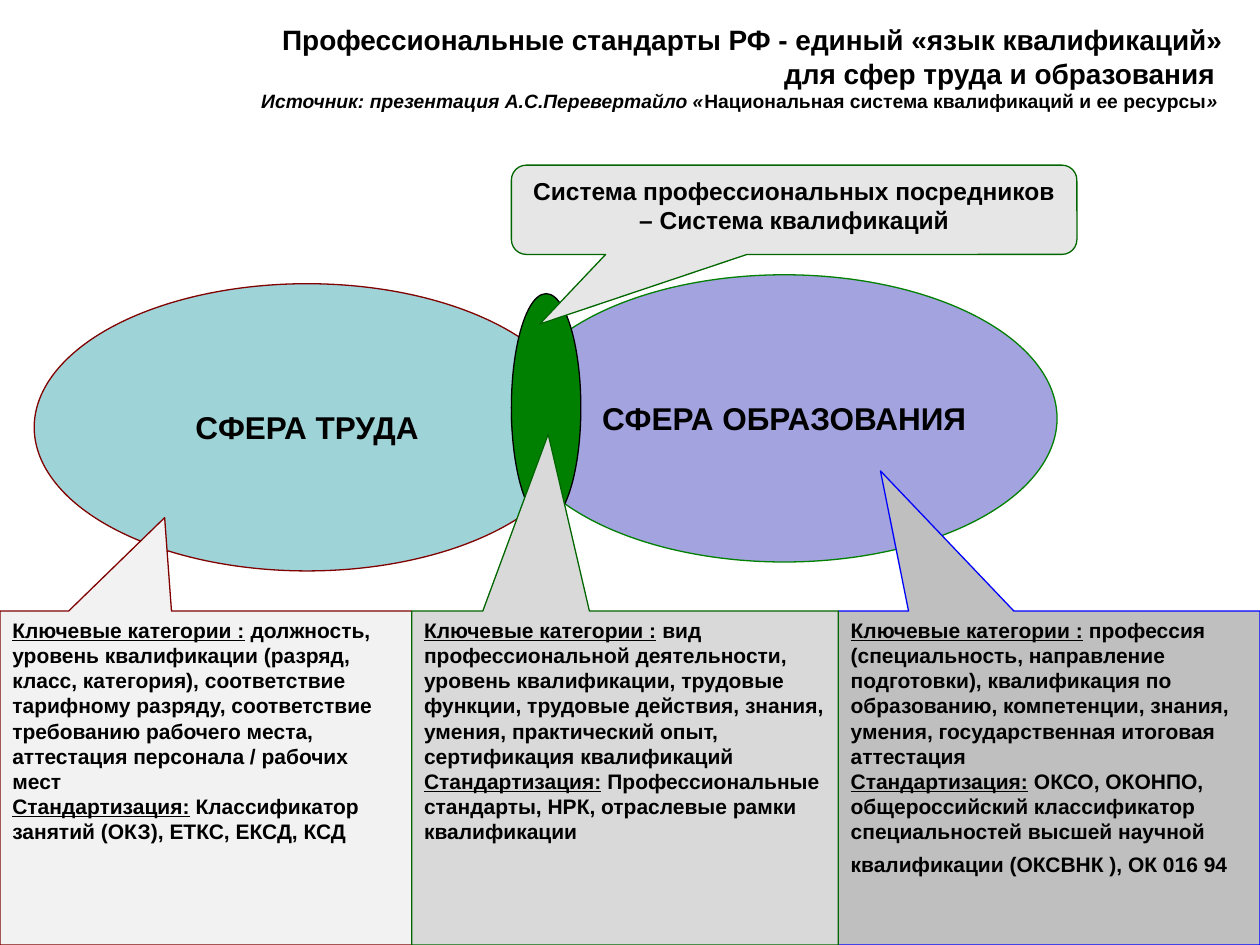
from dataclasses import dataclass

from pptx import Presentation
from pptx.dml.color import RGBColor
from pptx.enum.shapes import MSO_SHAPE
from pptx.enum.text import MSO_ANCHOR, PP_ALIGN
from pptx.util import Cm, Pt

COLORS = {
    "text": "000000",
    "labour": "9ED3D7",
    "education": "A3A3E0",
    "overlap": "008000",
    "maroon": "800000",
    "green": "006600",
    "blue": "0000FF",
    "grey_lightest": "F2F2F2",
    "grey_light": "E6E6E6",
    "grey_medium": "D9D9D9",
    "grey_dark": "BFBFBF",
}

SLIDE_WIDTH, SLIDE_HEIGHT = 25.4, 19.05
SPHERE_WIDTH, SPHERE_HEIGHT = 11, 5.79
OVERLAP_LEFT = 10.31
CALLOUT_TOP = 12.32


@dataclass
class Ellipse:
    label: str
    left: float
    top: float
    width: float
    height: float
    fill: str
    line: str


@dataclass
class Callout:
    categories: str
    standards: str
    left: float
    right: float
    tail: tuple[float, float]
    fill: str
    line: str
    closing_size: float = 12


ELLIPSES = [
    Ellipse("СФЕРА ТРУДА", 0.69, 5.72, SPHERE_WIDTH, SPHERE_HEIGHT, "labour", "maroon"),
    Ellipse("СФЕРА ОБРАЗОВАНИЯ", OVERLAP_LEFT, 5.54, SPHERE_WIDTH, SPHERE_HEIGHT, "education", "overlap"),
    Ellipse("", OVERLAP_LEFT, 5.92, 1.4, 4.6, "overlap", "text"),
]

CALLOUTS = [
    Callout(
        "должность, уровень квалификации (разряд, класс, категория), соответствие "
        "тарифному разряду, соответствие требованию рабочего места, "
        "аттестация персонала / рабочих мест",
        "Классификатор занятий (ОКЗ), ЕТКС, ЕКСД, КСД",
        0, 8.3, (-0.1, -0.78), "grey_lightest", "maroon",
    ),
    Callout(
        "профессия (специальность, направление подготовки), квалификация по "
        "образованию, компетенции, знания, умения, государственная итоговая аттестация",
        "ОКСО, ОКОНПО, общероссийский классификатор специальностей высшей научной "
        "квалификации (ОКСВНК ), ОК 016 94",
        16.9, SLIDE_WIDTH, (-0.4, -0.92), "grey_dark", "blue", closing_size=16,
    ),
    Callout(
        "вид профессиональной деятельности, уровень квалификации, трудовые функции, "
        "трудовые действия, знания, умения, практический опыт, сертификация квалификаций",
        "Профессиональные стандарты, НРК, отраслевые рамки квалификации",
        8.3, 16.9, (-0.18, -1.03), "grey_medium", "green",
    ),
]


def add_span(para, text: str, *, size: float, italic: bool = False, underline: bool = False) -> None:
    span = para.add_run()
    span.text = text
    font = span.font
    font.name = "Arial"
    font.size = Pt(size)
    font.bold = True
    font.italic = italic
    font.underline = underline
    font.color.rgb = RGBColor.from_string(COLORS["text"])


def add_outlined_shape(page, kind, left: float, top: float, width: float, height: float, fill: str, line: str):
    shape = page.shapes.add_shape(kind, Cm(left), Cm(top), Cm(width), Cm(height))
    shape.shadow.inherit = False
    shape.fill.solid()
    shape.fill.fore_color.rgb = RGBColor.from_string(COLORS[fill])
    shape.line.color.rgb = RGBColor.from_string(COLORS[line])
    shape.line.width = Pt(0.75)
    shape.text_frame.word_wrap = True
    shape.text_frame.vertical_anchor = MSO_ANCHOR.TOP
    return shape


def draw_ellipse(page, ellipse: Ellipse) -> None:
    shape = add_outlined_shape(
        page, MSO_SHAPE.OVAL, ellipse.left, ellipse.top,
        ellipse.width, ellipse.height, ellipse.fill, ellipse.line,
    )
    if ellipse.label:
        frame = shape.text_frame
        frame.word_wrap = False
        frame.vertical_anchor = MSO_ANCHOR.MIDDLE
        para = frame.paragraphs[0]
        para.alignment = PP_ALIGN.CENTER
        add_span(para, ellipse.label, size=18)


def draw_callout(page, callout: Callout) -> None:
    shape = add_outlined_shape(
        page, MSO_SHAPE.RECTANGULAR_CALLOUT, callout.left, CALLOUT_TOP,
        callout.right - callout.left, SLIDE_HEIGHT - CALLOUT_TOP, callout.fill, callout.line,
    )
    shape.adjustments[0], shape.adjustments[1] = callout.tail
    frame = shape.text_frame
    sections = [
        (frame.paragraphs[0], "Ключевые категории :", callout.categories),
        (frame.add_paragraph(), "Стандартизация:", callout.standards),
    ]
    for para, heading, body in sections:
        para.alignment = PP_ALIGN.LEFT
        add_span(para, heading, size=12, underline=True)
        add_span(para, f" {body}", size=12)
    if callout.closing_size != 12:
        add_span(para, " ", size=callout.closing_size)


def draw_title(page) -> None:
    box = page.shapes.add_textbox(Cm(4.9), Cm(0.33), Cm(20), Cm(3.23))
    frame = box.text_frame
    frame.word_wrap = True
    title, source = frame.paragraphs[0], frame.add_paragraph()
    title.alignment = source.alignment = PP_ALIGN.RIGHT
    add_span(title, "Профессиональные стандарты РФ - единый «язык квалификаций» для сфер труда и образования ", size=16)
    add_span(source, "Источник: презентация А.С.Перевертайло «", size=11, italic=True)
    add_span(source, "Национальная система квалификаций и ее ресурсы", size=11)
    add_span(source, "» ", size=11, italic=True)


def draw_mediators(page) -> None:
    shape = add_outlined_shape(
        page, MSO_SHAPE.ROUNDED_RECTANGULAR_CALLOUT, OVERLAP_LEFT, 3.33, 11.4, 1.8, "grey_light", "green",
    )
    shape.adjustments[0], shape.adjustments[1] = -0.45, 1.28
    para = shape.text_frame.paragraphs[0]
    para.alignment = PP_ALIGN.CENTER
    add_span(para, "Система профессиональных посредников – Система квалификаций", size=14)


def main() -> None:
    deck = Presentation()
    deck.slide_width, deck.slide_height = Cm(SLIDE_WIDTH), Cm(SLIDE_HEIGHT)
    page = deck.slides.add_slide(deck.slide_layouts[6])
    for ellipse in ELLIPSES:
        draw_ellipse(page, ellipse)
    draw_title(page)
    for callout in CALLOUTS:
        draw_callout(page, callout)
    draw_mediators(page)
    deck.save("out.pptx")


if __name__ == "__main__":
    main()
